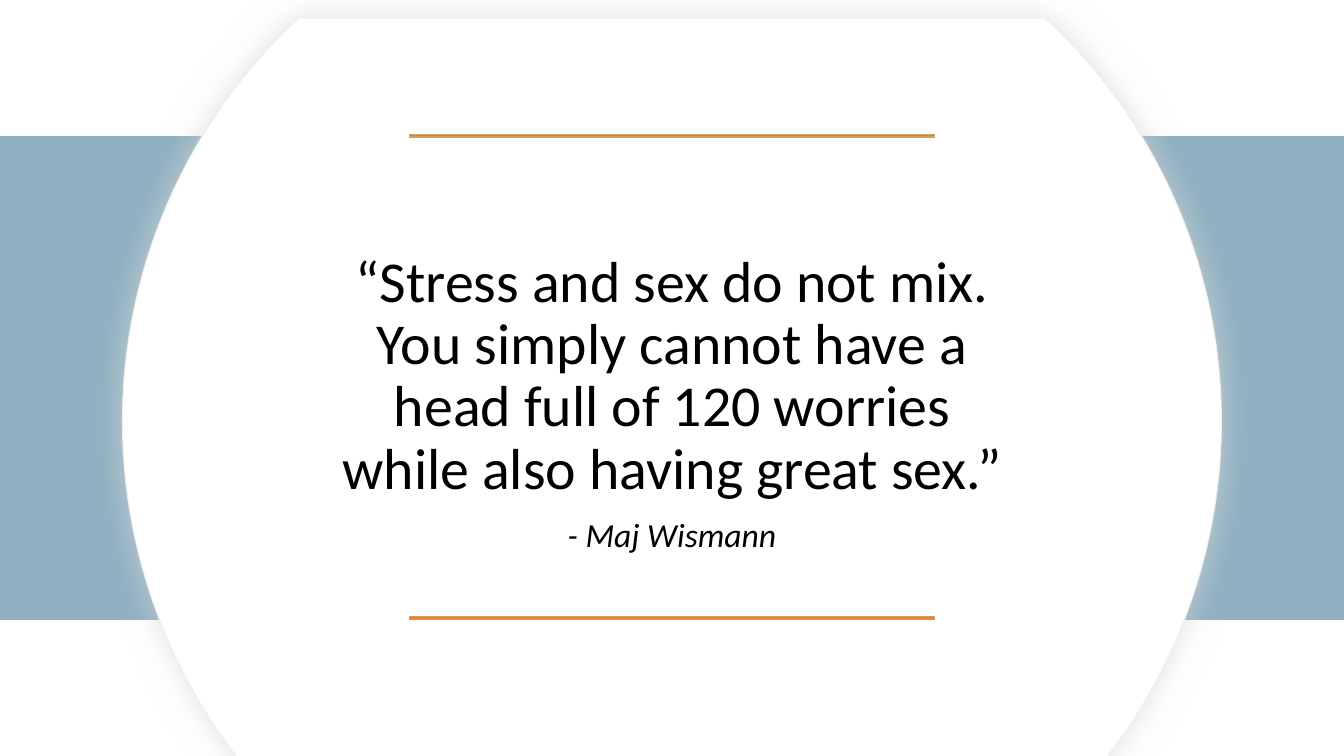
from math import asin, cos, pi, sin, tan

from lxml import etree
from pptx import Presentation
from pptx.dml.color import RGBColor
from pptx.enum.shapes import MSO_SHAPE
from pptx.enum.text import MSO_ANCHOR, PP_ALIGN
from pptx.oxml.ns import qn
from pptx.util import Inches, Pt

RECTANGLE = MSO_SHAPE.RECTANGLE
MIDDLE = MSO_ANCHOR.MIDDLE
CENTER = PP_ALIGN.CENTER

WIDTH, HEIGHT = 13.33, 7.5
FONT = "Calibri"
BLUE, WHITE, BLACK = "90B1C2", "FFFFFF", "000000"
ORANGE, ORANGE_EDGE = "ED7D31", "D09D5C"
DISC_EDGE, GLOW = "EFEFEF", "D8D8D8"


def color(value):
    return RGBColor.from_string(value)


def paint(shape, fill, line):
    shape.shadow.inherit = False
    shape.fill.solid()
    shape.fill.fore_color.rgb = color(fill)
    shape.line.color.rgb = color(line)
    shape.line.width = Pt(0.75)


def add_bar(page, box, fill, line):
    bar = page.shapes.add_shape(RECTANGLE, *map(Inches, box))
    paint(bar, fill, line)


def add_text(page, box, text, size, italic=False):
    frame = page.shapes.add_textbox(*map(Inches, box)).text_frame
    frame.word_wrap = True
    frame.vertical_anchor = MIDDLE
    para = frame.paragraphs[0]
    para.alignment = CENTER
    para.line_spacing = 0.9
    span = para.add_run()
    span.text = text
    span.font.name = FONT
    span.font.size = Pt(size)
    span.font.italic = italic
    span.font.color.rgb = color(BLACK)


def add_glow(shape, value, blur, opacity):
    """Put a soft, centred shadow round a shape."""
    effects = shape.element.spPr.find(qn("a:effectLst"))
    shadow = etree.SubElement(effects, qn("a:outerShdw"), blurRad=str(Pt(blur)),
                              dist="0", dir="0", algn="ctr", rotWithShape="0")
    tint = etree.SubElement(shadow, qn("a:srgbClr"), val=value)
    etree.SubElement(tint, qn("a:alpha"), val=str(opacity * 1000))


def bend(segment, center, radius, start, end):
    """Turn a straight outline segment into a circular arc."""
    reach = 4 / 3 * tan((end - start) / 4)
    controls = [(cos(start) - reach * sin(start), sin(start) + reach * cos(start)),
                (cos(end) + reach * sin(end), sin(end) - reach * cos(end))]
    segment.tag = qn("a:cubicBezTo")
    for index, (x, y) in enumerate(controls):
        point = etree.Element(qn("a:pt"), x=str(Inches(center[0] + radius * x)),
                              y=str(Inches(center[1] + radius * y)))
        segment.insert(index, point)


def add_disc(page, center_x, center_y, radius, top, bottom):
    """Draw a circle cut off flat at the top and bottom."""
    first = asin((top - center_y) / radius)
    last = asin((bottom - center_y) / radius)
    angles = [pi - first, first, 0, last, pi - last, pi, pi - first]
    points = [(Inches(center_x + radius * cos(angle)),
               Inches(center_y + radius * sin(angle))) for angle in angles]
    builder = page.shapes.build_freeform(*points[0])
    builder.add_line_segments(points[1:], close=True)
    disc = builder.convert_to_shape()
    segments = list(disc.element.iter(qn("a:lnTo")))
    for index in (1, 2, 4, 5):
        bend(segments[index], (radius, center_y - top), radius,
             angles[index], angles[index + 1])
    paint(disc, WHITE, DISC_EDGE)
    add_glow(disc, GLOW, blur=22, opacity=75)


def add_quote(page, box, quote, author):
    """Set a quote and its author between two rules."""
    left, top, width, height = box
    rule_height = 0.03
    for rule_top in (top, top + height - rule_height):
        add_bar(page, (left, rule_top, width, rule_height), ORANGE, ORANGE_EDGE)
    middle = left + width / 2
    for text, size, italic, offset, text_width, text_height in (
            (quote, 41.3, False, 1.06, 6.92, 2.7),
            (author, 24, True, 3.53, 6.37, 0.93)):
        text_box = (middle - text_width / 2, top + offset, text_width, text_height)
        add_text(page, text_box, text, size, italic)


def build_quote_page(deck):
    page = deck.slides.add_slide(deck.slide_layouts[6])
    # Band and disc
    add_bar(page, (0, 0.18 * HEIGHT, WIDTH, 4.8), BLUE, BLUE)
    add_disc(page, WIDTH / 2, 4.18, 5.45, 0.18, 7.68)
    # Quote
    add_quote(page, (4.06, 1.33, 5.21, 4.82),
              "“Stress and sex do not mix. You simply cannot have a head full of "
              "120 worries while also having great sex.”", "- Maj Wismann")


def main():
    deck = Presentation()
    deck.slide_width, deck.slide_height = Inches(WIDTH), Inches(HEIGHT)
    build_quote_page(deck)
    deck.save("out.pptx")


if __name__ == "__main__":
    main()
